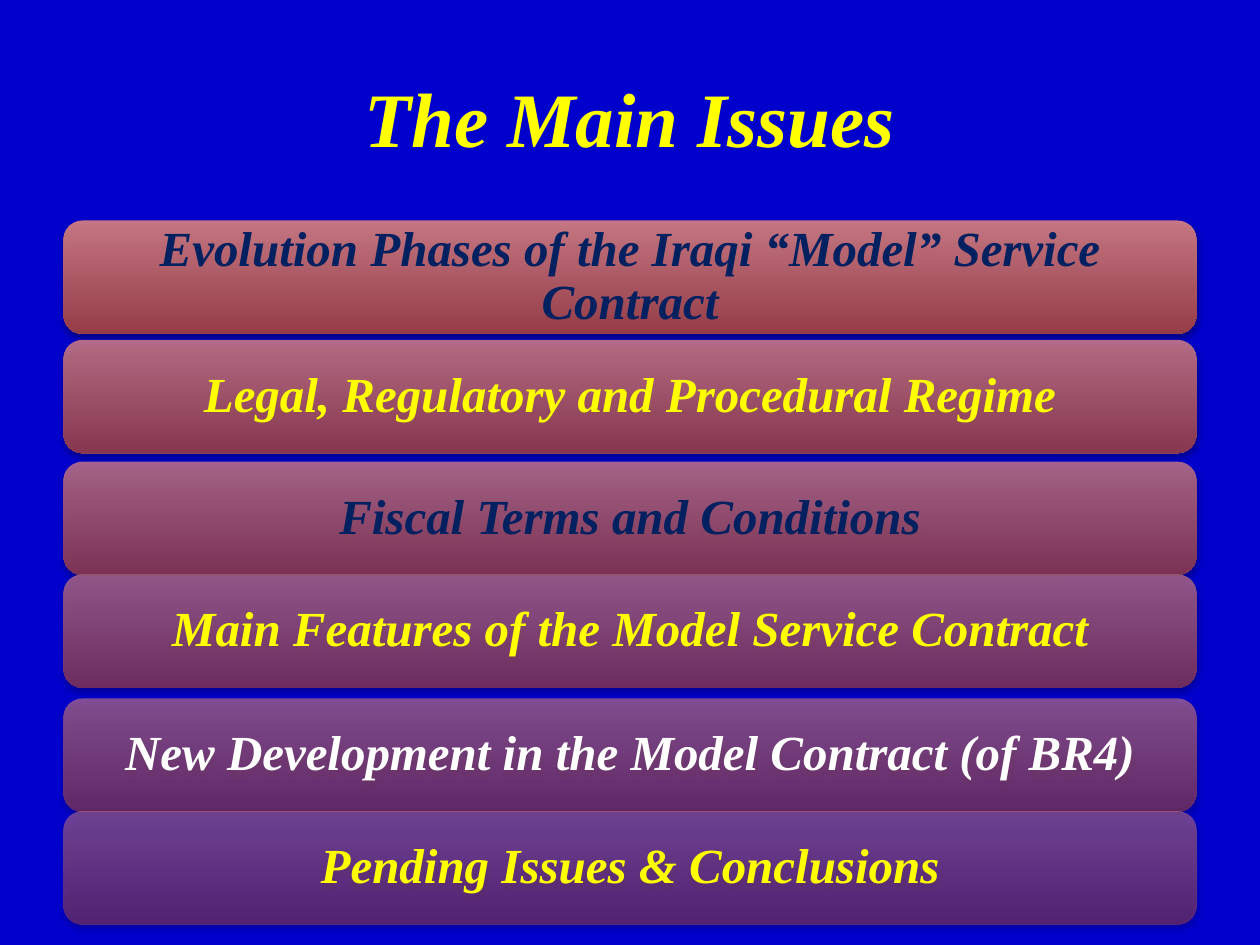
from lxml import etree
from pptx import Presentation
from pptx.dml.color import RGBColor
from pptx.enum import shapes, text
from pptx.oxml.ns import qn
from pptx.util import Pt

# Content: wording, text colour, top of bar
TITLE = "The Main Issues"
BARS = [
    ("Evolution Phases of the Iraqi “Model” Service Contract", "navy", 126),
    ("Legal, Regulatory and Procedural Regime", "yellow", 194.2),
    ("Fiscal Terms and Conditions", "navy", 263.8),
    ("Main Features of the Model Service Contract", "yellow", 328.2),
    ("New Development in the Model Contract (of BR4)", "white", 399.1),
    ("Pending Issues & Conclusions", "yellow", 463.5),
]
THEME = {
    "back": "0000CC", "yellow": "FFFF00", "navy": "002060", "white": "FFFFFF",
    "light": "DA8381", "dark": "A54442", "shade": "000000",
    "font": "Times New Roman", "title": 44, "bar": 28,
}
LEFT, WIDTH, HEIGHT = 36.3, 647.4, 64.8
FIRST, STEP = 90, 8  # opacity in percent, and its drop per bar


def tint(name):
    return RGBColor.from_string(THEME[name])


def write(shape, words, color, size, pad_x, pad_y):
    frame = shape.text_frame
    frame.word_wrap = True
    frame.vertical_anchor = text.MSO_ANCHOR.MIDDLE
    frame.margin_left = frame.margin_right = Pt(pad_x)
    frame.margin_top = frame.margin_bottom = Pt(pad_y)
    para = frame.paragraphs[0]
    para.text = words
    para.alignment = text.PP_ALIGN.CENTER
    font = para.font
    font.name, font.size = THEME["font"], Pt(THEME[size])
    font.bold = font.italic = True
    font.color.rgb = tint(color)
    return para


def set_alpha(color, percent):
    etree.SubElement(color, qn("a:alpha"), val=str(percent * 1000))


def paint(shape, percent):
    """Fill top to bottom with a see-through gradient and cast a soft shadow."""
    fill = shape.fill
    fill.gradient()
    fill.gradient_angle = 270
    for stop, name in zip(fill.gradient_stops, ("light", "dark")):
        stop.color.rgb = tint(name)
    props = shape._element.spPr
    for color in props.findall(".//" + qn("a:gs") + "/" + qn("a:srgbClr")):
        set_alpha(color, percent)
    shape.line.fill.background()
    shape.shadow.inherit = False
    cast = etree.SubElement(
        props.find(qn("a:effectLst")), qn("a:outerShdw"),
        blurRad=str(Pt(4)), dist=str(Pt(2)), dir="5400000", rotWithShape="0")
    set_alpha(etree.SubElement(cast, qn("a:srgbClr"), val=THEME["shade"]), 38)


def main():
    deck = Presentation()
    deck.slide_width, deck.slide_height = Pt(720), Pt(540)
    slide = deck.slides.add_slide(deck.slide_layouts[6])
    back = slide.background.fill
    back.solid()
    back.fore_color.rgb = tint("back")

    # Title
    head = slide.shapes.add_textbox(Pt(36), Pt(21.6), Pt(648), Pt(90))
    write(head, TITLE, "yellow", "title", 7.2, 3.6)

    # Issue bars, each more transparent than the last
    for i, (words, color, top) in enumerate(BARS):
        bar = slide.shapes.add_shape(
            shapes.MSO_SHAPE.ROUNDED_RECTANGLE,
            Pt(LEFT), Pt(top), Pt(WIDTH), Pt(HEIGHT))
        paint(bar, FIRST - STEP * i)
        para = write(bar, words, color, "bar", 12, 4)
        para.line_spacing = 0.9

    deck.save("out.pptx")


if __name__ == "__main__":
    main()
